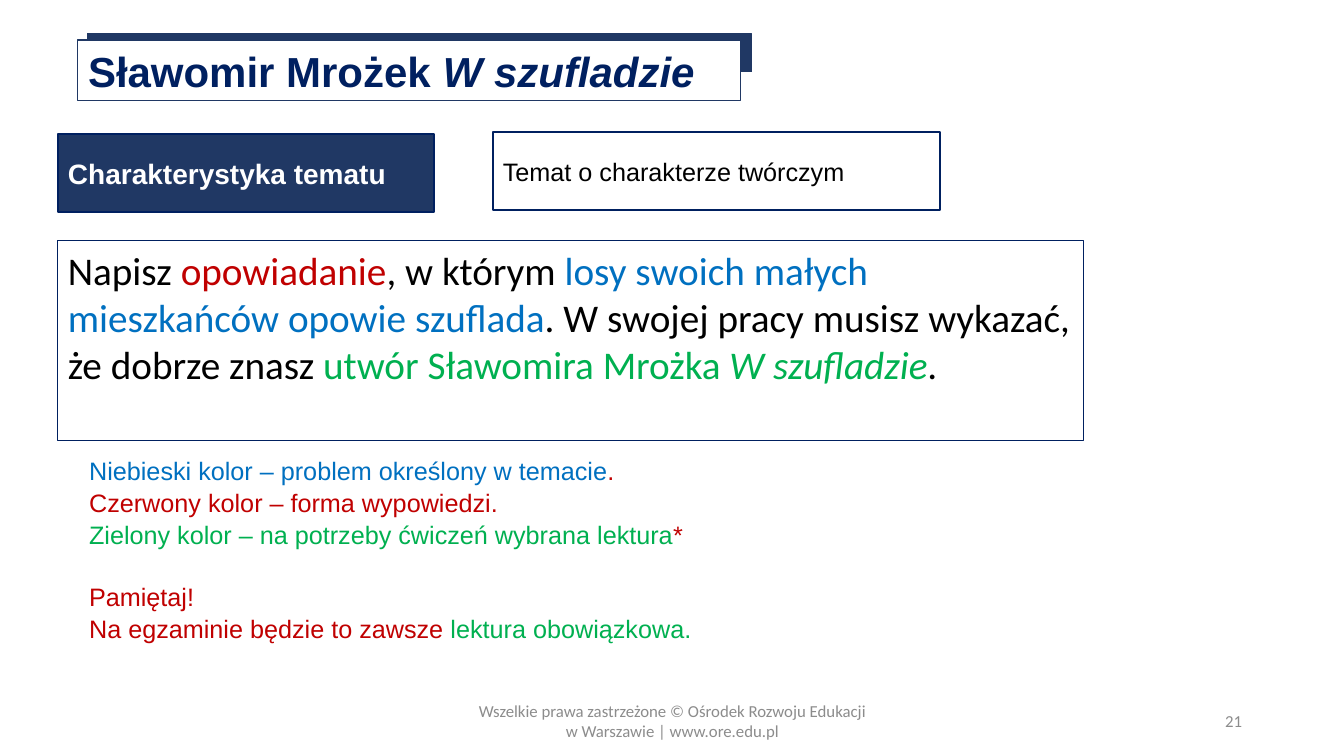
from dataclasses import dataclass

from pptx import Presentation
from pptx.dml.color import RGBColor
from pptx.enum.shapes import MSO_SHAPE
from pptx.enum.text import MSO_ANCHOR, MSO_AUTO_SIZE, PP_ALIGN
from pptx.oxml.ns import qn
from pptx.util import Pt

RECTANGLE = MSO_SHAPE.RECTANGLE
TOP, MIDDLE = MSO_ANCHOR.TOP, MSO_ANCHOR.MIDDLE
LEFT, CENTER, RIGHT = PP_ALIGN.LEFT, PP_ALIGN.CENTER, PP_ALIGN.RIGHT
NO_FIT = MSO_AUTO_SIZE.NONE


@dataclass(frozen=True)
class Theme:
    navy: str = "203864"
    ink: str = "002060"
    white: str = "FFFFFF"
    black: str = "000000"
    red: str = "C00000"
    blue: str = "0070C0"
    green: str = "00B050"
    gray: str = "8C8C8C"
    heading: str = "Arial"
    reading: str = "Calibri"
    title_size: int = 30
    task_size: int = 28
    label_size: int = 20
    text_size: int = 18
    footer_size: int = 12


THEME = Theme()
SLIDE_WIDTH, SLIDE_HEIGHT = 1344, 756
EMU_PER_PX = 12192000 / SLIDE_WIDTH

TITLE = [[("Sławomir Mrożek ", THEME.ink), ("W szufladzie", THEME.ink, True)]]
LABEL = [[("Charakterystyka tematu", THEME.white)]]
KIND = [[("Temat o charakterze twórczym", THEME.black)]]
TASK = [[
    ("Napisz ", THEME.black),
    ("opowiadanie", THEME.red),
    (", w którym ", THEME.black),
    ("losy swoich małych mieszkańców opowie szuflada", THEME.blue),
    (". W swojej pracy musisz wykazać, że dobrze znasz ", THEME.black),
    ("utwór Sławomira Mrożka", THEME.green),
    (" W szufladzie", THEME.green, True),
    (".", THEME.black),
]]
LEGEND = [
    [("Niebieski kolor – problem określony w temacie", THEME.blue), (".", THEME.red)],
    [("Czerwony kolor – forma wypowiedzi.", THEME.red)],
    [("Zielony kolor – na potrzeby ćwiczeń wybrana lektura", THEME.green), ("*", THEME.red)],
    [("Pamiętaj!", THEME.red)],
    [("Na egzaminie będzie to zawsze ", THEME.red), ("lektura obowiązkowa.", THEME.green)],
]
REMINDER = 3
FOOTER = [
    [("Wszelkie prawa zastrzeżone © Ośrodek Rozwoju Edukacji", THEME.gray)],
    [("w Warszawie | www.ore.edu.pl", THEME.gray)],
]
PAGE_NUMBER = [[("21", THEME.gray)]]

TITLE_BOX = (78, 40, 663, 61)
TITLE_BACK = (88, 34, 664, 38)
LABEL_BOX = (58, 134, 376, 78)
KIND_BOX = (493, 132, 447, 78)
TASK_BOX = (58, 241, 1026, 200)
LEGEND_BOX = (79, 449, 913, 193)
FOOTER_BOX = (446, 701, 453, 40)
PAGE_BOX = (949, 701, 303, 40)


def color(value):
    return RGBColor.from_string(value)


def apply(target, **values):
    for name, value in values.items():
        setattr(target, name, value)


def place(shape, box):
    names = ("left", "top", "width", "height")
    apply(shape, **{name: round(px * EMU_PER_PX) for name, px in zip(names, box)})


def paint(shape, fill, line, width):
    if fill:
        shape.fill.solid()
        shape.fill.fore_color.rgb = color(fill)
    else:
        shape.fill.background()
    shape.line.color.rgb = color(line)
    shape.line.width = Pt(width)


def write(shape, paragraphs, size, face, bold=False, align=LEFT, anchor=MIDDLE):
    frame = shape.text_frame
    apply(frame, word_wrap=True, auto_size=NO_FIT, vertical_anchor=anchor)
    for index, runs in enumerate(paragraphs):
        paragraph = frame.add_paragraph() if index else frame.paragraphs[0]
        apply(paragraph, alignment=align, space_before=Pt(0))
        for text, shade, *italic in runs:
            run = paragraph.add_run()
            run.text = text
            apply(run.font, size=Pt(size), name=face, bold=bold, italic=bool(italic))
            run.font.color.rgb = color(shade)


def add_rectangle(slide, box, fill, line, width):
    shape = slide.shapes.add_shape(RECTANGLE, 0, 0, 0, 0)
    shape.shadow.inherit = False
    place(shape, box)
    paint(shape, fill, line, width)
    return shape


def add_text(slide, box, paragraphs, align):
    shape = slide.shapes.add_textbox(0, 0, 0, 0)
    place(shape, box)
    write(shape, paragraphs, THEME.footer_size, THEME.reading, align=align)


def add_title(slide):
    title = slide.shapes.title
    place(title, TITLE_BOX)
    paint(title, THEME.white, THEME.navy, 0.75)
    write(title, TITLE, THEME.title_size, THEME.heading, bold=True, anchor=TOP)
    back = add_rectangle(slide, TITLE_BACK, THEME.navy, THEME.navy, 0.75)
    title.element.addprevious(back.element)


def add_legend(slide):
    legend = slide.placeholders[1]
    place(legend, LEGEND_BOX)
    write(legend, LEGEND, THEME.text_size, THEME.heading, anchor=TOP)
    paragraphs = legend.text_frame.paragraphs
    for paragraph in paragraphs:
        paragraph.line_spacing = 1.05
        properties = paragraph._p.get_or_add_pPr()
        properties.set("marL", "0")
        properties.set("indent", "0")
        properties.append(properties.makeelement(qn("a:buNone"), {}))
    paragraphs[REMINDER].space_before = Pt(22)


def main():
    presentation = Presentation()
    presentation.slide_width = round(SLIDE_WIDTH * EMU_PER_PX)
    presentation.slide_height = round(SLIDE_HEIGHT * EMU_PER_PX)
    slide = presentation.slides.add_slide(presentation.slide_layouts[1])

    add_title(slide)
    label = add_rectangle(slide, LABEL_BOX, THEME.navy, THEME.ink, 2)
    write(label, LABEL, THEME.label_size, THEME.heading, bold=True)
    kind = add_rectangle(slide, KIND_BOX, THEME.white, THEME.ink, 2)
    write(kind, KIND, THEME.text_size, THEME.heading)
    task = add_rectangle(slide, TASK_BOX, None, THEME.ink, 0.75)
    write(task, TASK, THEME.task_size, THEME.reading, anchor=TOP)
    add_legend(slide)
    add_text(slide, FOOTER_BOX, FOOTER, CENTER)
    add_text(slide, PAGE_BOX, PAGE_NUMBER, RIGHT)

    presentation.save("out.pptx")


if __name__ == "__main__":
    main()
